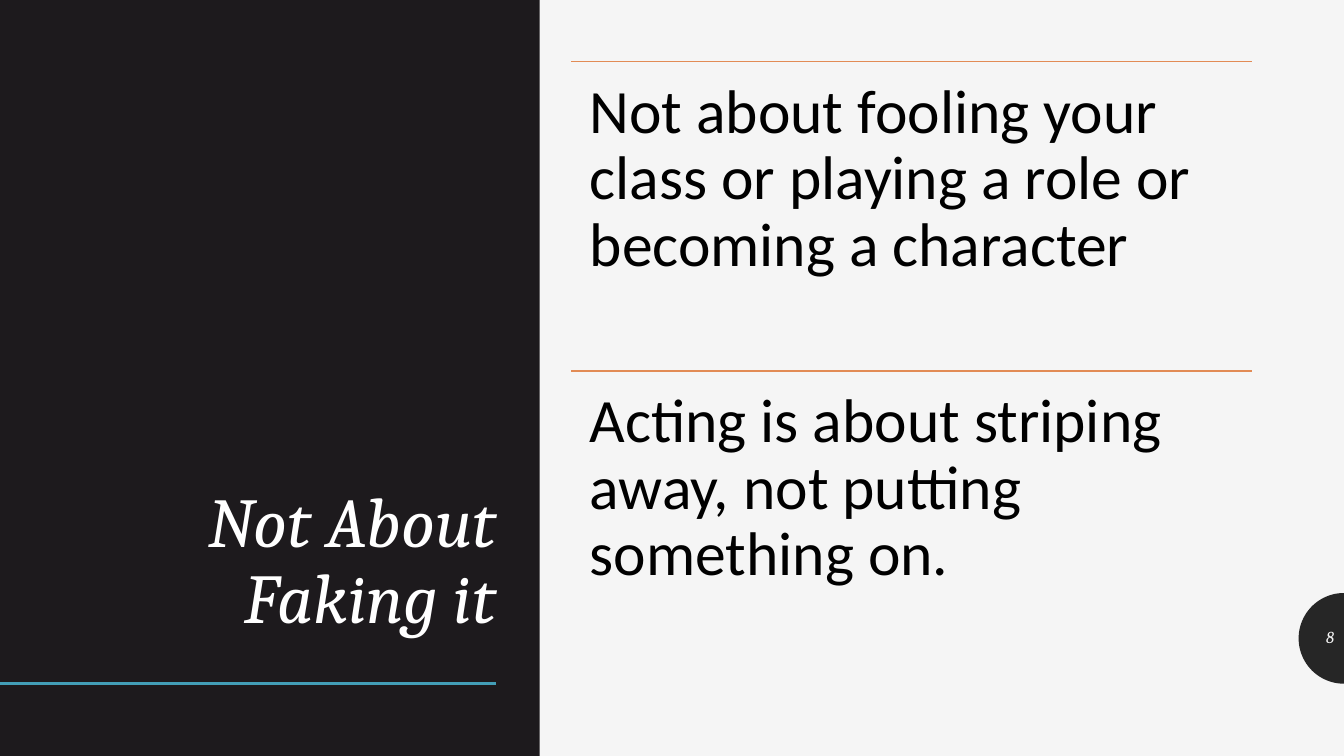
from math import cos, pi, sin

from lxml.etree import SubElement
from pptx import Presentation
from pptx.dml.color import RGBColor
from pptx.enum.shapes import MSO_CONNECTOR, MSO_SHAPE
from pptx.enum.text import MSO_ANCHOR, PP_ALIGN
from pptx.oxml.ns import qn
from pptx.util import Pt

PAPER = RGBColor(0xF5, 0xF5, 0xF5)
PANEL = RGBColor(0x1D, 0x1A, 0x1D)
BADGE = RGBColor(0x26, 0x26, 0x26)
TEAL = RGBColor(0x43, 0x9E, 0xB7)
ORANGE = RGBColor(0xE2, 0x8B, 0x55)
WHITE = RGBColor(0xFF, 0xFF, 0xFF)
BLACK = RGBColor(0, 0, 0)

deck = Presentation()
deck.slide_width, deck.slide_height = Pt(960), Pt(540)
slide = deck.slides.add_slide(deck.slide_layouts[6])
slide.background.fill.solid()
slide.background.fill.fore_color.rgb = PAPER
shapes = slide.shapes


def add_rule(left, right, top, color, width):
    rule = shapes.add_connector(
        MSO_CONNECTOR.STRAIGHT, Pt(left), Pt(top), Pt(right), Pt(top))
    rule.line.color.rgb = color
    rule.line.width = Pt(width)
    SubElement(rule._element.spPr, qn("a:effectLst"))


def add_text(words, left, top, width, height, size, font, color,
             anchor=MSO_ANCHOR.TOP, align=PP_ALIGN.LEFT, italic=False, inset=None):
    box = shapes.add_textbox(Pt(left), Pt(top), Pt(width), Pt(height))
    frame = box.text_frame
    frame.word_wrap = True
    frame.vertical_anchor = anchor
    if inset is not None:
        frame.margin_left = frame.margin_right = Pt(inset)
        frame.margin_top = frame.margin_bottom = Pt(inset)
    para = frame.paragraphs[0]
    para.alignment = align
    para.line_spacing = 0.9
    run = para.add_run()
    run.text = words
    run.font.size = Pt(size)
    run.font.name = font
    run.font.italic = italic
    run.font.color.rgb = color


# Half-round badge on the right edge
mid, radius, steps = 456, 32.4, 48
arc = [(Pt(960 - radius * sin(pi * i / steps)), Pt(mid - radius * cos(pi * i / steps)))
       for i in range(steps + 1)]
outline = shapes.build_freeform(*arc[0], scale=1.0)
outline.add_line_segments(arc[1:], close=True)
badge = outline.convert_to_shape()

# Dark panel on the left
panel = shapes.add_shape(MSO_SHAPE.RECTANGLE, 0, 0, Pt(385.5), Pt(540))
for shape, color in ((badge, BADGE), (panel, PANEL)):
    shape.shadow.inherit = False
    shape.fill.solid()
    shape.fill.fore_color.rgb = color
    shape.line.fill.background()
add_rule(0, 354.24, 488.16, TEAL, 2)

# Title and page number
add_text("Not About Faking it", 60, 44, 301.5, 415.5, 50, "Cambria", WHITE,
         MSO_ANCHOR.BOTTOM, PP_ALIGN.RIGHT, True)
add_text("8", 928, 441.5, 32, 28.8, 12, "Cambria", PAPER,
         MSO_ANCHOR.MIDDLE, PP_ALIGN.RIGHT, True)

# Two points, each under a rule
points = [
    "Not about fooling your class or playing a role or becoming a character",
    "Acting is about striping away, not putting something on.",
]
left, top, width, pitch = 408, 44, 486, 221
for i, words in enumerate(points):
    y = top + i * pitch
    add_rule(left, left + width, y, ORANGE, 1)
    add_text(words, left, y, width, pitch, 44, "Calibri", BLACK, inset=13.2)

deck.save("out.pptx")
